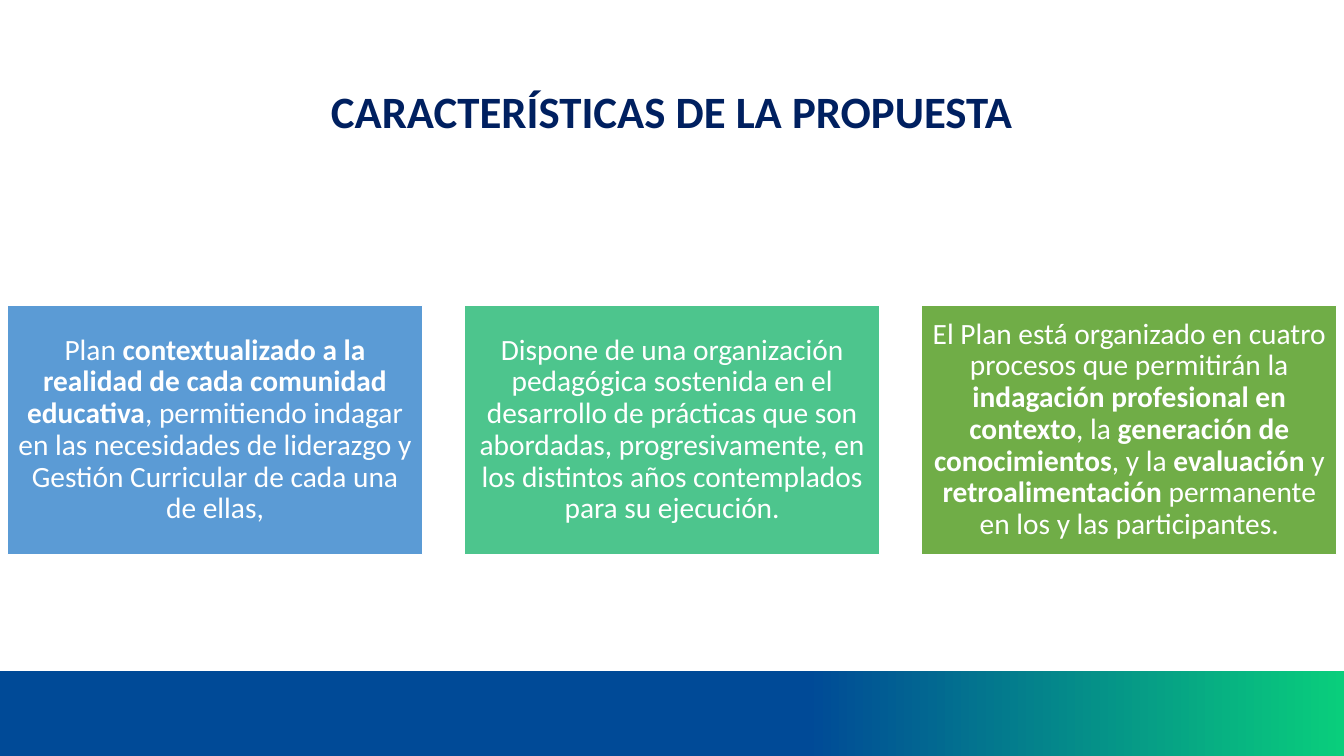
from dataclasses import dataclass

from pptx import Presentation
from pptx.dml.color import RGBColor
from pptx.enum.shapes import MSO_SHAPE
from pptx.enum.text import MSO_ANCHOR, PP_ALIGN
from pptx.slide import Slide
from pptx.util import Cm, Pt

RECTANGLE = MSO_SHAPE.RECTANGLE
MIDDLE = MSO_ANCHOR.MIDDLE
CENTER = PP_ALIGN.CENTER

WHITE = RGBColor(0xFF, 0xFF, 0xFF)
NAVY = RGBColor(0x00, 0x20, 0x60)
BAND_BLUE = RGBColor(0x00, 0x4A, 0x97)
BAND_GREEN = RGBColor(0x09, 0xCE, 0x7C)
CARD_BLUE = RGBColor(0x5B, 0x9B, 0xD5)
CARD_TEAL = RGBColor(0x4D, 0xC5, 0x8D)
CARD_GREEN = RGBColor(0x70, 0xAD, 0x47)

FONT = "Calibri"
SLIDE_WIDTH, SLIDE_HEIGHT = Cm(33.87), Cm(19.05)
BAND_TOP = Cm(16.9)
CARD_LEFT, CARD_TOP = Cm(0.19), Cm(7.7)
CARD_WIDTH, CARD_HEIGHT = Cm(10.46), Cm(6.27)
CARD_PITCH = Cm(11.52)
CARD_MARGIN = Cm(0.23)


@dataclass(frozen=True)
class Card:
    """A coloured card whose text pieces alternate regular and bold."""

    color: RGBColor
    pieces: tuple[str, ...]


CARDS = (
    Card(CARD_BLUE, (
        "Plan ",
        "contextualizado a la realidad de cada comunidad educativa",
        ", permitiendo indagar en las necesidades de liderazgo y "
        "Gestión Curricular de cada una de ellas,",
    )),
    Card(CARD_TEAL, (
        "Dispone de una organización pedagógica sostenida en el desarrollo "
        "de prácticas que son abordadas, progresivamente, en los distintos "
        "años contemplados para su ejecución.",
    )),
    Card(CARD_GREEN, (
        "El Plan está organizado en cuatro procesos que permitirán la ",
        "indagación profesional en contexto",
        ", la ",
        "generación de conocimientos",
        ", y la ",
        "evaluación",
        " y ",
        "retroalimentación",
        " permanente en los y las participantes.",
    )),
)


def add_band(slide: Slide) -> None:
    band = slide.shapes.add_shape(
        RECTANGLE, 0, BAND_TOP, SLIDE_WIDTH, SLIDE_HEIGHT - BAND_TOP
    )
    band.shadow.inherit = False
    band.line.fill.background()
    band.fill.gradient()
    band.fill.gradient_angle = 0
    stops = ((0.6, BAND_BLUE), (1.0, BAND_GREEN))
    for stop, (position, color) in zip(band.fill.gradient_stops, stops):
        stop.position = position
        stop.color.rgb = color


def format_title(slide: Slide) -> None:
    title = slide.shapes.title
    title.left, title.top = Cm(2.33), Cm(1.02)
    title.width, title.height = Cm(29.21), Cm(3.68)
    title.text_frame.text = "CARACTERÍSTICAS DE LA PROPUESTA"
    title.text_frame.vertical_anchor = MIDDLE
    paragraph = title.text_frame.paragraphs[0]
    paragraph.alignment = CENTER
    paragraph.line_spacing = 0.9
    font = paragraph.runs[0].font
    font.name, font.size, font.bold = FONT, Pt(32), True
    font.color.rgb = NAVY


def add_card(slide: Slide, card: Card, column: int) -> None:
    shape = slide.shapes.add_shape(
        RECTANGLE, CARD_LEFT + column * CARD_PITCH, CARD_TOP, CARD_WIDTH, CARD_HEIGHT
    )
    shape.shadow.inherit = False
    shape.fill.solid()
    shape.fill.fore_color.rgb = card.color
    shape.line.color.rgb = WHITE
    shape.line.width = Pt(1)

    frame = shape.text_frame
    frame.word_wrap = True
    frame.vertical_anchor = MIDDLE
    frame.margin_left = frame.margin_right = CARD_MARGIN
    frame.margin_top = frame.margin_bottom = CARD_MARGIN
    paragraph = frame.paragraphs[0]
    paragraph.alignment = CENTER
    paragraph.line_spacing = 0.9
    for index, piece in enumerate(card.pieces):
        run = paragraph.add_run()
        run.text = piece
        run.font.name, run.font.size = FONT, Pt(21)
        run.font.bold = index % 2 == 1
        run.font.color.rgb = WHITE


def main() -> None:
    presentation = Presentation()
    presentation.slide_width = SLIDE_WIDTH
    presentation.slide_height = SLIDE_HEIGHT
    title_only = presentation.slide_layouts.get_by_name("Title Only")
    slide = presentation.slides.add_slide(title_only)
    add_band(slide)
    format_title(slide)
    for column, card in enumerate(CARDS):
        add_card(slide, card, column)
    presentation.save("out.pptx")


if __name__ == "__main__":
    main()
